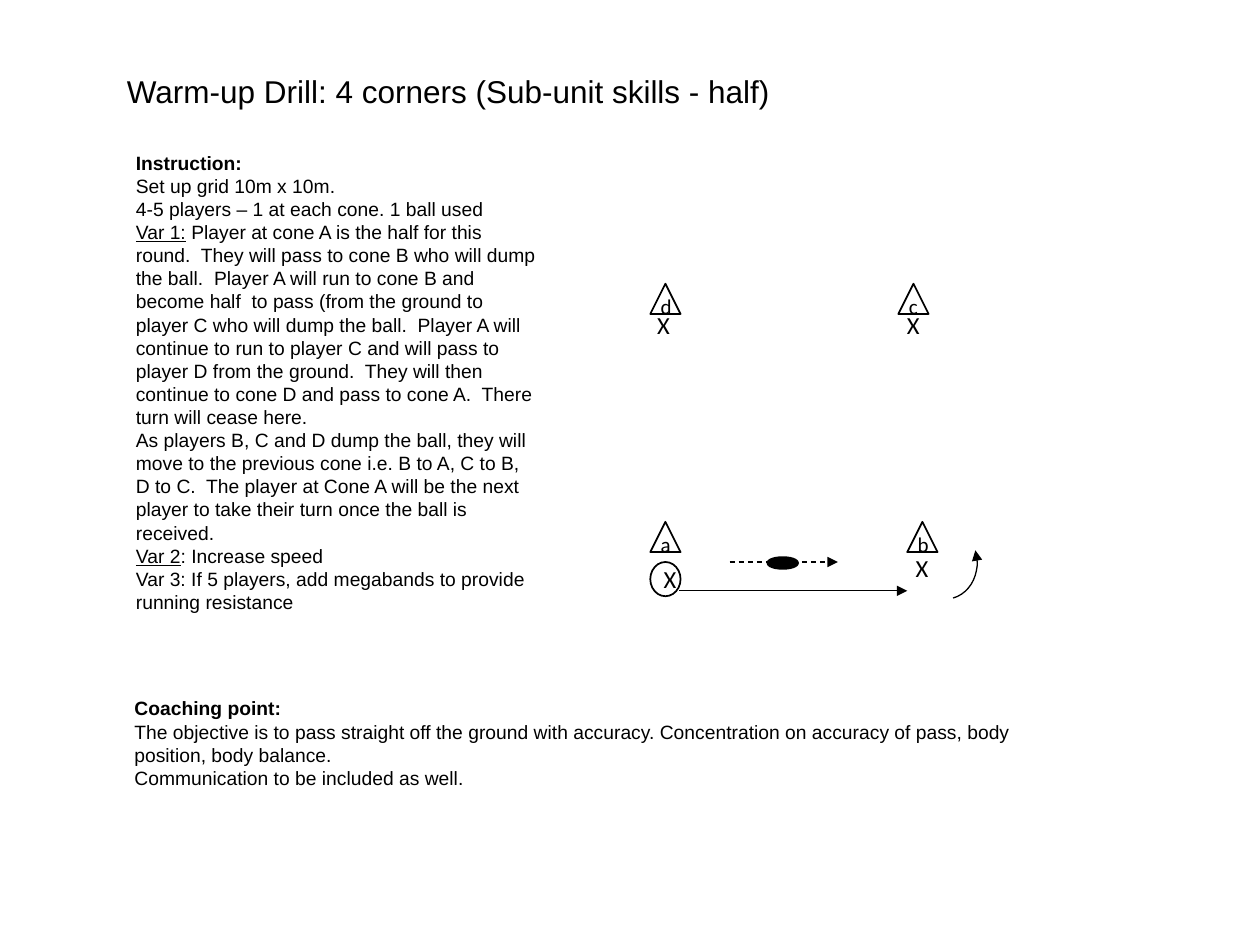
"""Builds the four corners warm-up drill slide."""
from lxml.etree import SubElement
from pptx import Presentation
from pptx.dml.color import RGBColor
from pptx.enum.dml import MSO_LINE_DASH_STYLE as Dash
from pptx.enum.shapes import MSO_CONNECTOR as Connector, MSO_SHAPE as Shape
from pptx.enum.text import MSO_ANCHOR as Anchor, MSO_AUTO_SIZE as AutoSize, PP_ALIGN as Align
from pptx.oxml.ns import qn
from pptx.util import Cm, Pt

COLORS = {"ink": "000000"}
INK = RGBColor.from_string(COLORS["ink"])


def write(frame, paragraphs, font, size, align=Align.LEFT):
    for index, runs in enumerate(paragraphs):
        para = frame.paragraphs[0] if index == 0 else frame.add_paragraph()
        para.alignment = align
        for text, style in runs:
            span = para.add_run()
            span.text = text
            span.font.name = font
            span.font.size = Pt(size)
            span.font.color.rgb = INK
            span.font.bold = style == "bold"
            span.font.underline = style == "underline"


def outline(shape, width, arrow=None):
    shape.line.color.rgb = INK
    shape.line.width = Pt(width)
    if arrow:
        SubElement(shape.line._get_or_add_ln(), qn(f"a:{arrow}"), type="triangle")


deck = Presentation()
deck.slide_width, deck.slide_height = Cm(25.4), Cm(19.05)
page = deck.slides.add_slide(deck.slide_layouts[6])

title = [[("Warm-up Drill: 4 corners (Sub-unit skills - half)", "")]]
instruction = [
    [("Instruction:", "bold")],
    [("Set up grid 10m x 10m.", "")],
    [("4-5 players – 1 at each cone. 1 ball used", "")],
    [("Var 1:", "underline"),
     (" Player at cone A is the half for this round.  They will pass to cone B who will "
      "dump the ball.  Player A will run to cone B and become half  to pass (from the ground "
      "to player C who will dump the ball.  Player A will continue to run to player C and "
      "will pass to player D from the ground.  They will then continue to cone D and pass to "
      "cone A.  There turn will cease here.", "")],
    [("As players B, C and D dump the ball, they will move to the previous cone i.e. B to A, "
      "C to B, D to C.  The player at Cone A will be the next player to take their turn once "
      "the ball is received.", "")],
    [("Var 2", "underline"), (": Increase speed", "")],
    [("Var 3: If 5 players, add megabands to provide running resistance", "")],
]
coaching = [
    [("Coaching point:", "bold")],
    [("The objective is to pass straight off the ground with accuracy. Concentration on "
      "accuracy of pass, body position, body balance.", "")],
    [("Communication to be included as well.", "")],
]
player = [[("X", "")]]

for left, top, width, height, paragraphs, font, size, wrap in [
    (2.31, 1.32, 13.59, 1.02, title, "Arial", 18, False),
    (2.49, 2.92, 8.61, 10.13, instruction, "Arial", 11, True),
    (2.46, 13.92, 18.52, 2.9, coaching, "Arial", 11, True),
    (13, 6.12, 0.89, 0.86, player, "Calibri", 14, False),
    (18.03, 6.12, 0.76, 0.86, player, "Calibri", 14, False),
    (18.21, 11.02, 0.76, 0.86, player, "Calibri", 14, False),
]:
    box = page.shapes.add_textbox(Cm(left), Cm(top), Cm(width), Cm(height))
    box.text_frame.word_wrap = wrap
    box.text_frame.auto_size = AutoSize.SHAPE_TO_FIT_TEXT
    write(box.text_frame, paragraphs, font, size)

for kind, left, top, height, label, size in [
    (Shape.ISOSCELES_TRIANGLE, 18.11, 5.72, 0.61, "c", 12),
    (Shape.ISOSCELES_TRIANGLE, 13.11, 5.72, 0.61, "d", 12),
    (Shape.ISOSCELES_TRIANGLE, 18.29, 10.52, 0.61, "b", 12),
    (Shape.ISOSCELES_TRIANGLE, 13.11, 10.52, 0.61, "a", 12),
    (Shape.OVAL, 13.11, 11.33, 0.69, "X", 14),
]:
    marker = page.shapes.add_shape(kind, Cm(left), Cm(top), Cm(0.61), Cm(height))
    marker.shadow.inherit = False
    marker.fill.background()
    outline(marker, 1)
    marker.text_frame.vertical_anchor = Anchor.MIDDLE
    write(marker.text_frame, [[(label, "")]], "Calibri", size, Align.CENTER)

for start, end, level, dash in [
    (14.71, 16.89, 11.33, Dash.DASH),
    (13.69, 18.29, 11.91, Dash.SOLID),
]:
    arrow = page.shapes.add_connector(
        Connector.STRAIGHT, Cm(start), Cm(level), Cm(end), Cm(level))
    arrow.line.dash_style = dash
    outline(arrow, 0.75, "tailEnd")
    SubElement(arrow._element.spPr, qn("a:effectLst"))

ball = page.shapes.add_shape(Shape.OVAL, Cm(15.49), Cm(11.25), Cm(0.58), Cm(0.2))
ball.shadow.inherit = False
ball.fill.solid()
ball.fill.fore_color.rgb = INK
outline(ball, 2)

turn = page.shapes.add_shape(Shape.ARC, Cm(18.19), Cm(10.59), Cm(1.6), Cm(1.4))
turn.shadow.inherit = False
turn.fill.background()
turn.rotation = 73.8
outline(turn, 0.75, "headEnd")

deck.save("out.pptx")
